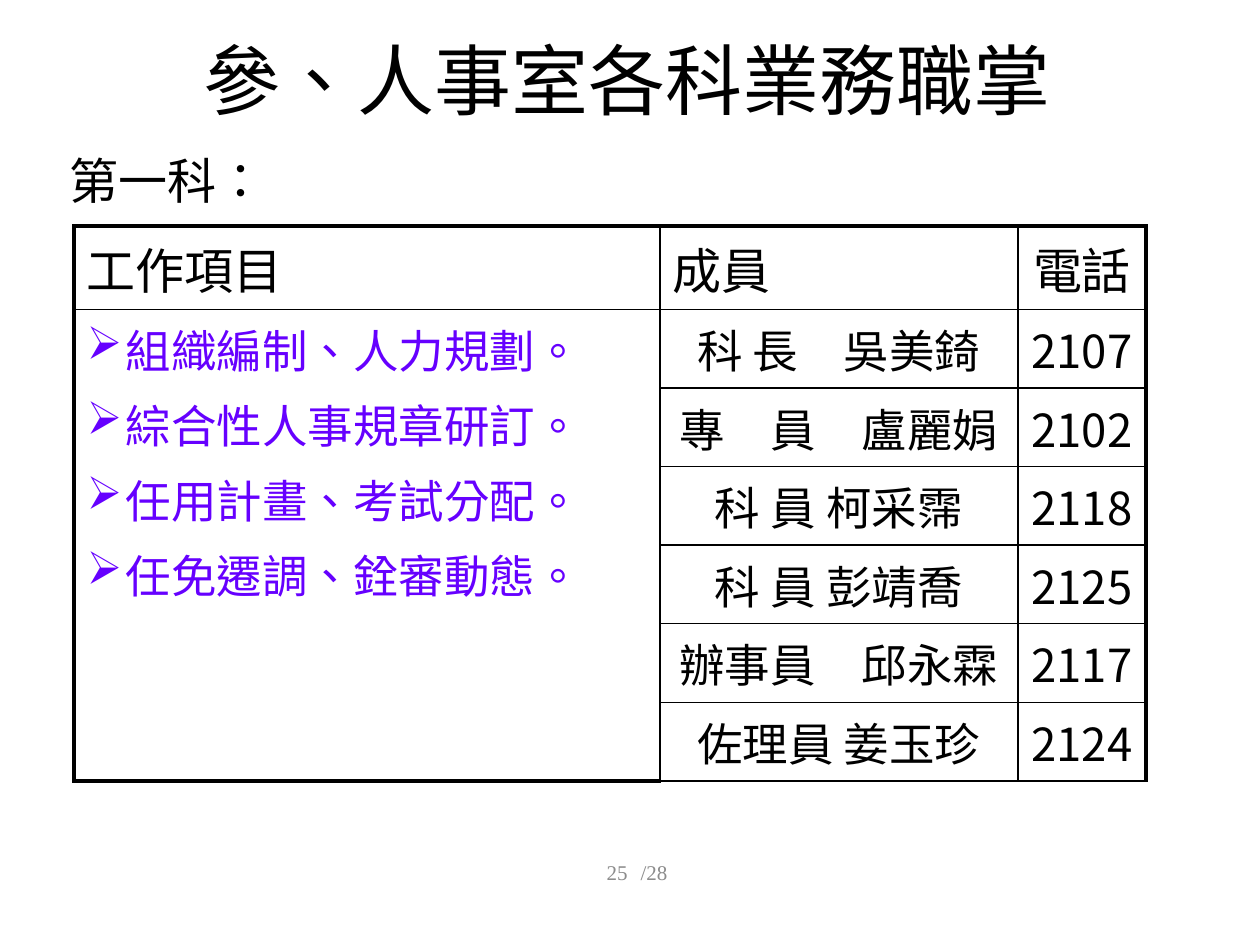
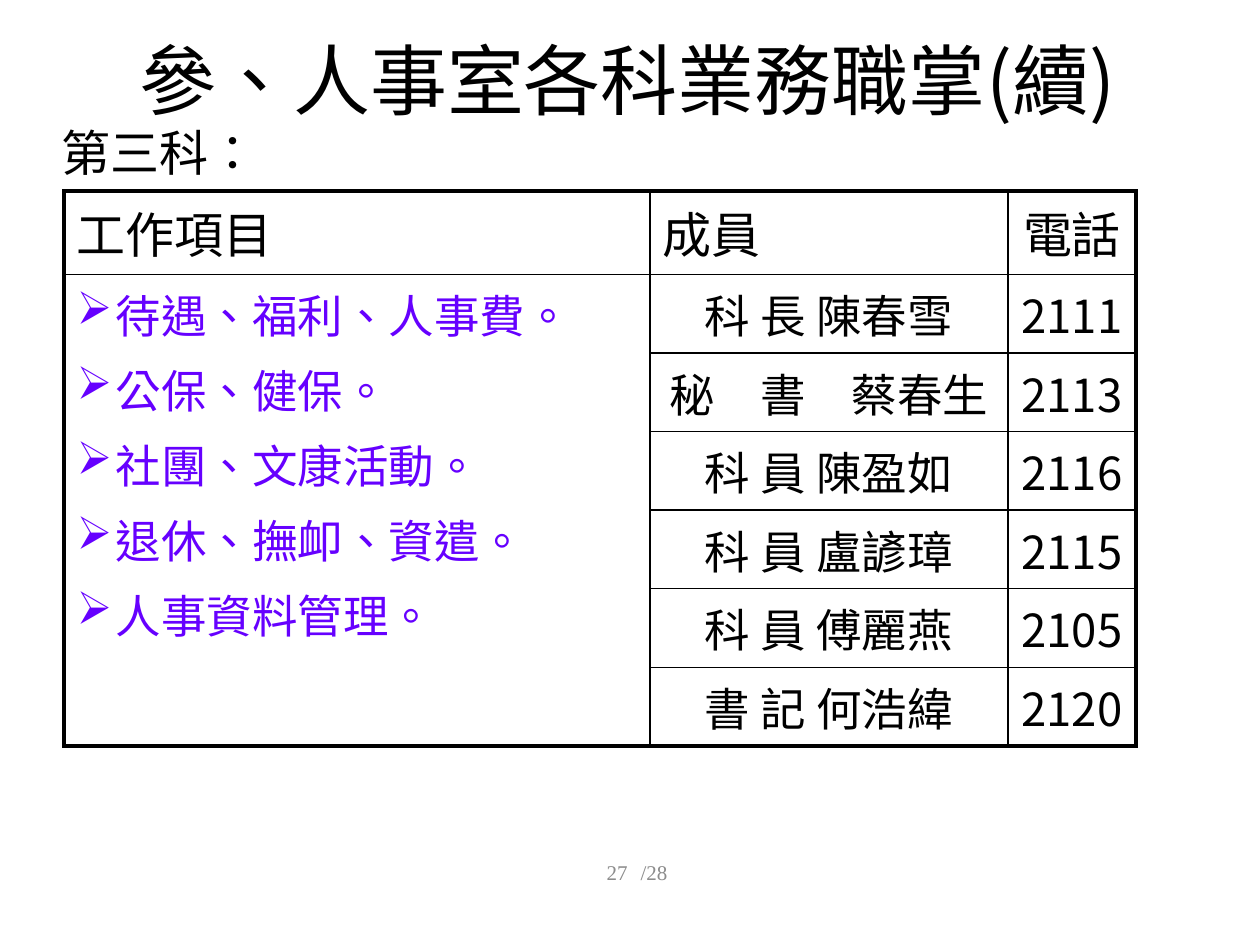
from lxml.etree import SubElement
from pptx import Presentation
from pptx.dml.color import RGBColor
from pptx.enum.text import MSO_ANCHOR, PP_ALIGN
from pptx.oxml.ns import qn
from pptx.util import Pt

SCALE = 914400 / 126
BLACK = RGBColor(0x00, 0x00, 0x00)
VIOLET = RGBColor(0x66, 0x00, 0xFF)
GREY = RGBColor(0x8C, 0x8C, 0x8C)
SANS = "Noto Sans CJK SC"
SERIF = "Times New Roman"
THIN, THICK = 1, 2.25
COLS = (586, 358, 128)
HEAD_H, ROW_H = 83, 78
HEADS = ("工作項目", "成員", "電話")
GAP = " "  # en space between the parts of a member's entry


def px(n):
    return round(n * SCALE)


def add_run(para, text, size, color=BLACK, face=SANS):
    run = para.add_run()
    run.text = text
    run.font.size = Pt(size)
    run.font.name = face
    run.font.color.rgb = color
    props = run.font._element
    props.set("lang", "zh-TW")
    SubElement(props, qn("a:ea")).set("typeface", SANS)


def add_title(slide, text):
    title = slide.shapes.title
    title.left, title.top, title.width, title.height = map(px, (92, 0, 1071, 158))
    title.text_frame.vertical_anchor = MSO_ANCHOR.MIDDLE
    para = title.text_frame.paragraphs[0]
    para.alignment = PP_ALIGN.CENTER
    add_run(para, text, 44)


def add_label(slide, box, text, size, color, align):
    frame = slide.shapes.add_textbox(*map(px, box)).text_frame
    frame.word_wrap = True
    frame.vertical_anchor = MSO_ANCHOR.MIDDLE
    para = frame.paragraphs[0]
    para.alignment = align
    add_run(para, text, size, color, SERIF)


def add_footer(slide, page):
    add_label(slide, (357, 847, 283, 50), page, 12, GREY, PP_ALIGN.RIGHT)
    add_label(slide, (441, 847, 426, 50), "/28", 12, GREY, PP_ALIGN.CENTER)


def set_edge(cell, side, width):
    line = SubElement(cell._tc.get_or_add_tcPr(), qn(f"a:ln{side}"), w=str(Pt(width)))
    fill = SubElement(line, qn("a:solidFill"))
    SubElement(fill, qn("a:srgbClr"), val=str(BLACK))


def style_cell(cell, row, col, last, closed):
    """Thick outer frame and thin inner rules; closed thickens the whole foot."""
    duties = col == 0 and row > 0
    foot = duties or (row == last and closed)
    edges = {"L": col == 0, "R": col == 2, "T": row == 0, "B": foot}
    for side, thick in edges.items():
        inner = cell.is_spanned and (side == "T" or side == "B" and row < last)
        if not inner:
            set_edge(cell, side, THICK if thick else THIN)
    cell.fill.background()


def fill_cell(cell, text, size, align):
    para = cell.text_frame.paragraphs[0]
    para.alignment = align
    add_run(para, text, size)


def fill_duties(cell, duties):
    frame = cell.text_frame
    for i, duty in enumerate(duties):
        para = frame.add_paragraph() if i else frame.paragraphs[0]
        para.alignment = PP_ALIGN.JUSTIFY
        if i:
            para.space_before = Pt(5.2)
        props = para._p.get_or_add_pPr()
        props.set("marL", str(px(39)))
        props.set("indent", str(px(-39)))
        SubElement(props, qn("a:buChar"), char="➢")
        add_run(para, duty, 26, VIOLET)


def add_staff(slide, left, top, duties, staff, closed):
    last = len(staff)
    height = HEAD_H + ROW_H * last
    table = slide.shapes.add_table(
        last + 1, 3, px(left), px(top), px(sum(COLS)), px(height)).table
    table.first_row = table.horz_banding = False
    for col, width in zip(table.columns, COLS):
        col.width = px(width)
    for i, row in enumerate(table.rows):
        row.height = px(ROW_H if i else HEAD_H)
    table.cell(1, 0).merge(table.cell(last, 0))
    for r in range(last + 1):
        for c in range(3):
            style_cell(table.cell(r, c), r, c, last, closed)

    # Heading row, then duties and members
    for c, head in enumerate(HEADS):
        align = PP_ALIGN.CENTER if c == 2 else PP_ALIGN.JUSTIFY
        fill_cell(table.cell(0, c), head, 28, align)
    fill_duties(table.cell(1, 0), duties)
    for r, (name, phone) in enumerate(staff, 1):
        fill_cell(table.cell(r, 1), name.replace(" ", GAP), 26, PP_ALIGN.CENTER)
        fill_cell(table.cell(r, 2), phone, 26, PP_ALIGN.CENTER)


def add_page(deck, title, unit, spot, grid, duties, staff, page, closed):
    slide = deck.slides.add_slide(deck.slide_layouts[5])
    add_title(slide, title)
    add_staff(slide, *grid, duties, staff, closed)
    add_label(slide, (*spot, 1071, 40), unit, 28, BLACK, PP_ALIGN.LEFT)
    add_footer(slide, page)


def main():
    deck = Presentation()
    deck.slide_width, deck.slide_height = px(1260), px(945)

    # First section
    add_page(
        deck, "參、人事室各科業務職掌", "第一科：", (57, 160), (74, 226),
        ("組織編制、人力規劃。", "綜合性人事規章研訂。",
         "任用計畫、考試分配。", "任免遷調、銓審動態。"),
        (("科 長　吳美錡", "2107"), ("專　員　盧麗娟", "2102"),
         ("科 員 柯采霈", "2118"), ("科 員 彭靖喬", "2125"),
         ("辦事員　邱永霖", "2117"), ("佐理員 姜玉珍", "2124")),
        "25", closed=False)

    # Third section
    add_page(
        deck, "參、人事室各科業務職掌(續)", "第三科：", (49, 132), (64, 191),
        ("待遇、福利、人事費。", "公保、健保。", "社團、文康活動。",
         "退休、撫卹、資遣。", "人事資料管理。"),
        (("科 長 陳春雪", "2111"), ("秘　書　蔡春生", "2113"),
         ("科 員 陳盈如", "2116"), ("科 員 盧諺璋", "2115"),
         ("科 員 傅麗燕", "2105"), ("書 記 何浩緯", "2120")),
        "27", closed=True)

    deck.save("out.pptx")


if __name__ == "__main__":
    main()
